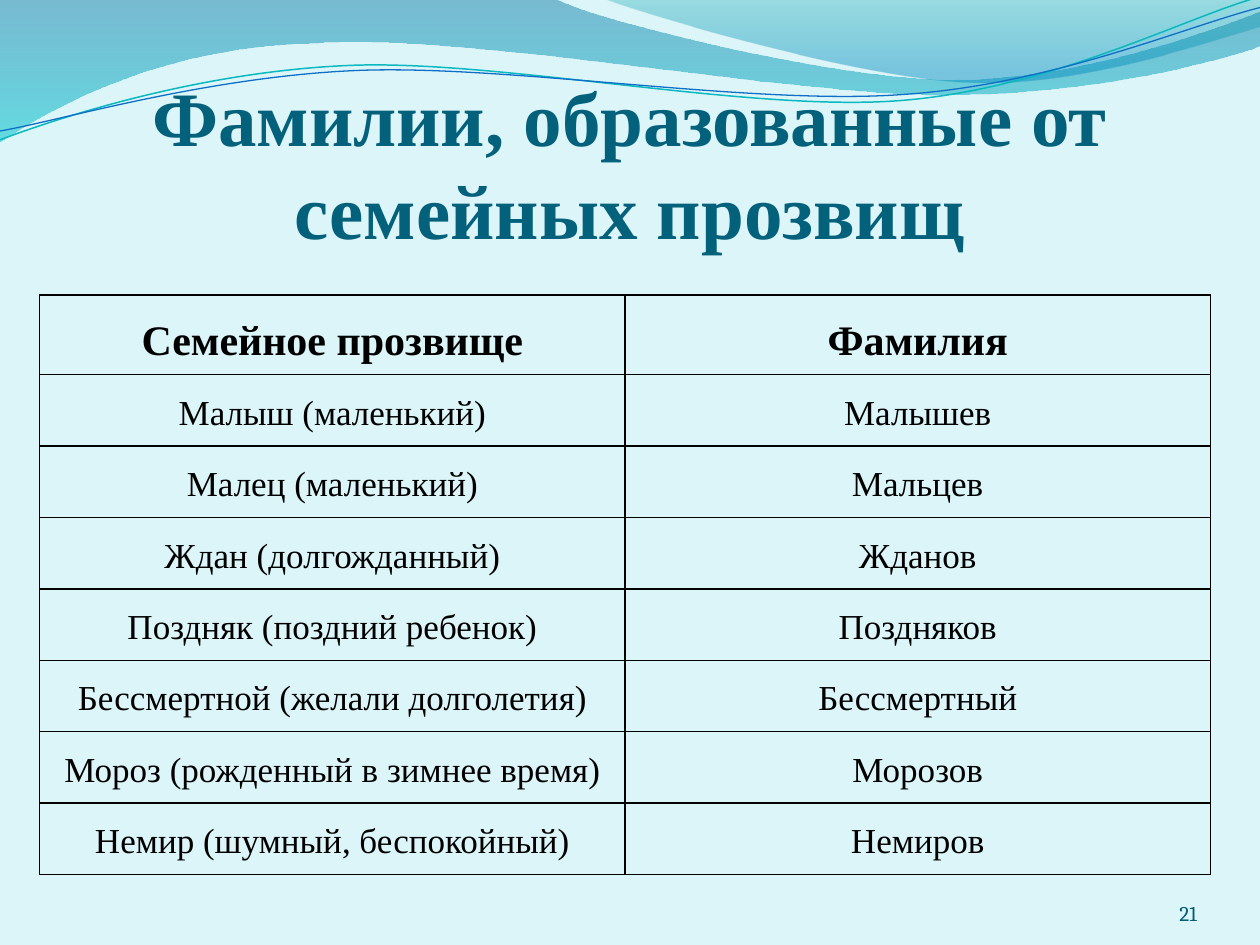
"""Build a slide with a table of surnames formed from family nicknames."""
from dataclasses import dataclass
from typing import Optional

from lxml.etree import SubElement
from pptx import Presentation
from pptx.dml.color import RGBColor
from pptx.enum.text import MSO_ANCHOR as Anchor, MSO_AUTO_SIZE as AutoSize, PP_ALIGN as Align
from pptx.oxml import parse_xml
from pptx.oxml.ns import nsdecls, qn
from pptx.util import Cm, Pt

COLORS = {
    "background": "DBF5F9",
    "title": "04617B",
    "text": "000000",
    "number": "045D75",
    "teal_line": "0AB8BF",
    "blue_line": "0F6FC6",
}
SERIF = "Times New Roman"
CURVE_UNIT = Cm(2.54)
HEADER = ("Семейное прозвище", "Фамилия")
SURNAMES = (
    ("Малыш (маленький)", "Малышев"),
    ("Малец (маленький)", "Мальцев"),
    ("Ждан (долгожданный)", "Жданов"),
    ("Поздняк (поздний ребенок)", "Поздняков"),
    ("Бессмертной (желали долголетия)", "Бессмертный"),
    ("Мороз (рожденный в зимнее время)", "Морозов"),
    ("Немир (шумный, беспокойный)", "Немиров"),
)


@dataclass
class GradientStop:
    """Position and opacity in percent, with a hex colour."""
    position: int
    color: str
    opacity: int


@dataclass
class Wave:
    """Outline of points (2 numbers) and Bézier segments (6 numbers)."""
    segments: tuple
    stops: tuple = ()
    line_color: Optional[str] = None
    line_width: float = 0


WAVES = (
    Wave(((0, 0), (4.4, -0.01), (4.76, 0.17, 6.64, 0.63, 7.58, 0.63),
          (8.53, 0.63, 9.58, 0.26, 10, 0.09), (10.01, 0.36),
          (9.83, 0.44, 8.7, 0.76, 7.46, 0.75), (6.22, 0.75, 3.82, 0.28, 2.57, 0.34),
          (1.29, 0.36, 0.46, 0.83, -0.01, 1.13), (0, 0)),
         (GradientStop(0, "0074A1", 45), GradientStop(100, "00C6CF", 55))),
    Wave(((4.79, -0.01), (5.09, 0.11, 6.82, 0.62, 7.69, 0.65),
          (8.56, 0.69, 9.61, 0.32, 10, 0.21), (10, 0), (4.79, -0.01)),
         (GradientStop(0, "00A1A9", 30), GradientStop(80, "008BBF", 45))),
    Wave(((0, 1.11), (0.48, 0.93, 1.58, 0.57, 2.77, 0.52),
          (3.95, 0.47, 5.93, 0.89, 7.13, 0.8), (8.33, 0.71, 9.38, 0.15, 9.98, -0.02)),
         line_color="teal_line", line_width=0.85),
    Wave(((0, 1.04), (0.47, 0.96, 1.64, 0.61, 2.83, 0.56),
          (4.03, 0.51, 5.97, 0.84, 7.17, 0.75), (8.36, 0.67, 9.41, 0.21, 10, 0.06)),
         line_color="blue_line", line_width=0.75),
)


def rgb(name: str) -> RGBColor:
    return RGBColor.from_string(COLORS[name])


def bend_segments(shape, segments: tuple) -> None:
    """Join the straight steps through Bézier control points into curves."""
    steps = iter(list(shape.element.iter(qn("a:lnTo"))))
    for segment in segments[1:]:
        first = next(steps)
        if len(segment) == 2:
            continue
        curve = parse_xml(f'<a:cubicBezTo {nsdecls("a")}/>')
        first.addprevious(curve)
        for step in (first, next(steps), next(steps)):
            curve.append(step[0])
            step.getparent().remove(step)


def draw_wave(slide, wave: Wave) -> None:
    points = [(round(segment[i] * CURVE_UNIT), round(segment[i + 1] * CURVE_UNIT))
              for segment in wave.segments for i in range(0, len(segment), 2)]
    builder = slide.shapes.build_freeform(*points[0])
    builder.add_line_segments(points[1:], close=bool(wave.stops))
    shape = builder.convert_to_shape()
    bend_segments(shape, wave.segments)
    shape.shadow.inherit = False
    if not wave.stops:
        shape.fill.background()
        shape.line.color.rgb = rgb(wave.line_color)
        shape.line.width = Pt(wave.line_width)
        return
    shape.line.fill.background()
    stops = "".join(
        f'<a:gs pos="{stop.position * 1000}"><a:srgbClr val="{stop.color}">'
        f'<a:alpha val="{stop.opacity * 1000}"/></a:srgbClr></a:gs>' for stop in wave.stops)
    gradient = parse_xml(f'<a:gradFill {nsdecls("a")}><a:gsLst>{stops}</a:gsLst>'
                         '<a:lin ang="5400000" scaled="0"/></a:gradFill>')
    shape.element.spPr.find(qn("a:custGeom")).addnext(gradient)


def write(text_frame, text: str, size: float, color: str, font: str = SERIF,
          bold: bool = False, align: Align = Align.CENTER, spacing: float = 1.0) -> None:
    text_frame.text = text
    paragraph = text_frame.paragraphs[0]
    paragraph.alignment = align
    paragraph.line_spacing = spacing
    for run in paragraph.runs:
        run.font.name, run.font.size, run.font.bold = font, Pt(size), bold
        run.font.color.rgb = rgb(color)


def place_frame(shape, left: float, top: float, width: float, height: float) -> None:
    shape.left, shape.top, shape.width, shape.height = map(Cm, (left, top, width, height))
    frame = shape.text_frame
    frame.word_wrap, frame.auto_size = True, AutoSize.NONE
    frame.vertical_anchor = Anchor.BOTTOM
    frame.margin_left = frame.margin_right = frame.margin_top = frame.margin_bottom = 0


def add_borders(cell) -> None:
    properties = cell._tc.get_or_add_tcPr()
    for index, side in enumerate(("lnL", "lnR", "lnT", "lnB")):
        line = parse_xml(f'<a:{side} {nsdecls("a")} w="{Pt(1)}"/>')
        fill = SubElement(line, qn("a:solidFill"))
        SubElement(fill, qn("a:srgbClr")).set("val", COLORS["text"])
        properties.insert(index, line)


def add_surname_table(slide) -> None:
    rows = (HEADER, *SURNAMES)
    table = slide.shapes.add_table(len(rows), len(HEADER), Cm(0.8), Cm(5.95),
                                   Cm(23.6), Cm(11.68)).table
    table.horz_banding = False
    for row_index, row in enumerate(rows):
        is_header = row_index == 0
        table.rows[row_index].height = Cm(1.6 if is_header else 1.44)
        for column_index, text in enumerate(row):
            cell = table.cell(row_index, column_index)
            cell.fill.background()
            cell.margin_left = cell.margin_right = Cm(0.18)
            cell.margin_top = cell.margin_bottom = 0
            write(cell.text_frame, text, 24 if is_header else 20, "text",
                  bold=is_header, spacing=1.5)
            add_borders(cell)


def main() -> None:
    presentation = Presentation()
    presentation.slide_width, presentation.slide_height = Cm(25.4), Cm(19.05)
    slide = presentation.slides.add_slide(presentation.slide_layouts[5])
    slide.background.fill.solid()
    slide.background.fill.fore_color.rgb = rgb("background")
    for wave in WAVES:
        draw_wave(slide, wave)

    title = slide.shapes.title
    title.element.getparent().append(title.element)
    place_frame(title, 1.27, 1.19, 22.86, 3.94)
    title.text_frame.margin_top = Cm(0.13)
    write(title.text_frame, "Фамилии, образованные от семейных прозвищ", 44, "title", bold=True)

    add_surname_table(slide)

    number = slide.shapes.add_textbox(0, 0, 0, 0)
    place_frame(number, 22.02, 17.65, 2.11, 1.02)
    write(number.text_frame, "21", 12, "number", font="Cambria", align=Align.RIGHT)
    presentation.save("out.pptx")


if __name__ == "__main__":
    main()
